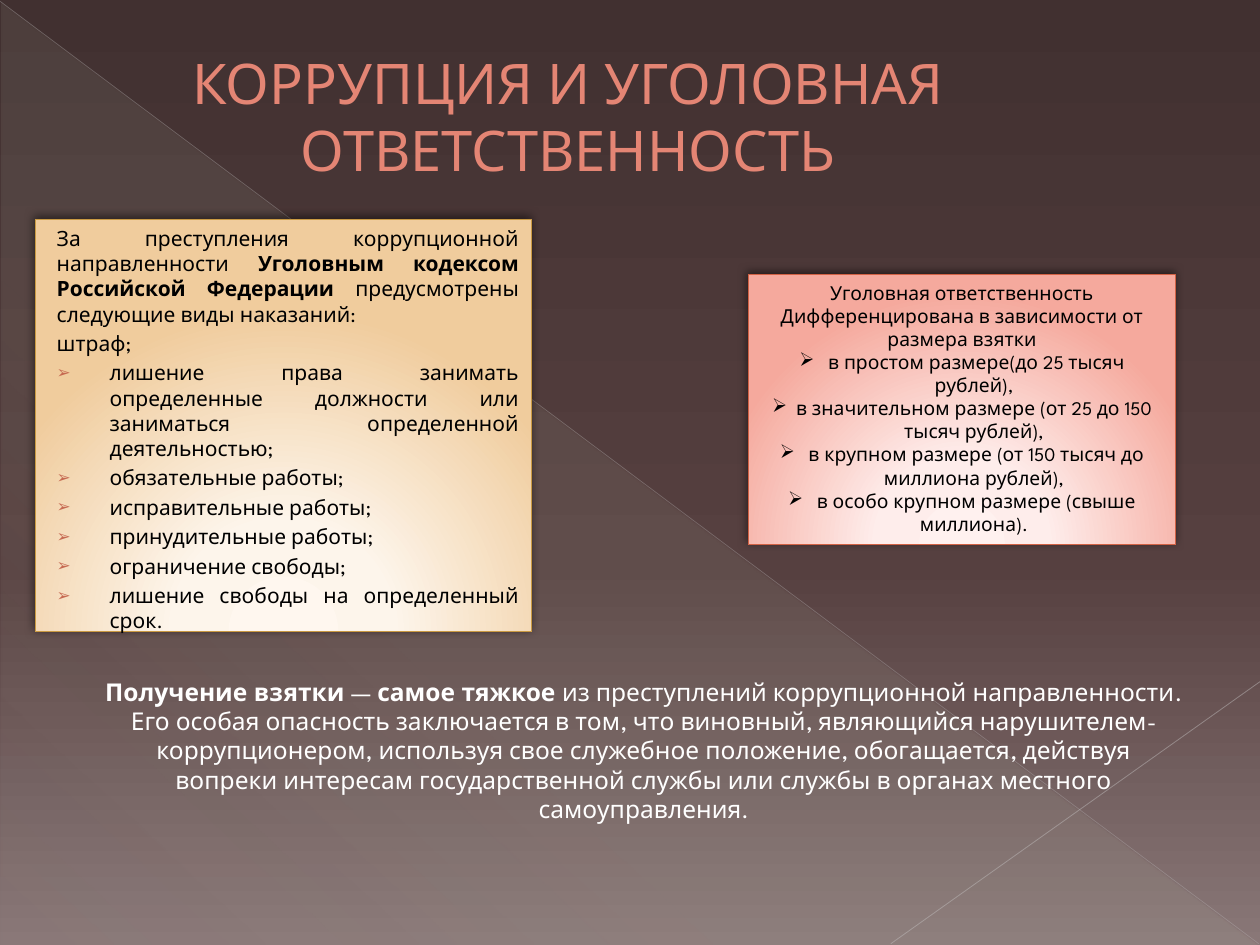
from lxml.etree import SubElement
from pptx import Presentation
from pptx.dml.color import RGBColor
from pptx.enum.shapes import MSO_CONNECTOR, MSO_SHAPE
from pptx.enum.text import MSO_ANCHOR, MSO_AUTO_SIZE, PP_ALIGN
from pptx.oxml.ns import qn
from pptx.util import Inches, Pt


def color(value):
    return RGBColor.from_string(value)


def add_node(parent, tag, **attributes):
    return SubElement(parent, qn(tag), {key: str(value) for key, value in attributes.items()})


def add_color(parent, value, alpha=100):
    node = add_node(parent, "a:srgbClr", val=value)
    if alpha < 100:
        add_node(node, "a:alpha", val=alpha * 1000)


def paint_gradient(fill, holder, stops, angle=None):
    fill.gradient()
    gradient = next(holder.iter(qn("a:gradFill")))
    for child in list(gradient):
        gradient.remove(child)
    stop_list = add_node(gradient, "a:gsLst")
    for position, *tint in stops:
        add_color(add_node(stop_list, "a:gs", pos=position * 1000), *tint)
    if angle is None:
        circle = add_node(gradient, "a:path", path="circle")
        add_node(circle, "a:fillToRect", l=50000, t=155000, r=50000, b=-55000)
    else:
        add_node(gradient, "a:lin", ang=angle * 60000, scaled=0)


class SlideBuilder:
    font = "League Spartan"
    bullet = "➢"

    def __init__(self, slide):
        self.slide = slide
        self.shapes = slide.shapes

    def place(self, shape, left, top, width, height):
        shape.left, shape.top = Inches(left), Inches(top)
        shape.width, shape.height = Inches(width), Inches(height)

    def take_placeholder(self, index, box):
        shape = self.slide.placeholders[index]
        parent = shape.element.getparent()
        parent.append(shape.element)
        self.place(shape, *box)
        return shape

    def background(self, stops):
        fill = self.slide.background.fill
        paint_gradient(fill, self.slide.element, stops, 90)

    def triangle(self, box, stops, angle):
        shape = self.shapes.add_shape(MSO_SHAPE.RIGHT_TRIANGLE, *map(Inches, box))
        shape.shadow.inherit = False
        shape.line.fill.background()
        paint_gradient(shape.fill, shape.element, stops, angle)

    def line(self, start, end, tint, width, alpha):
        connector = self.shapes.add_connector(MSO_CONNECTOR.STRAIGHT, *map(Inches, start + end))
        connector.line.color.rgb = color(tint)
        connector.line.width = Pt(width)
        solid = next(connector.element.iter(qn("a:srgbClr")))
        add_node(solid, "a:alpha", val=alpha * 1000)
        add_node(connector.element.spPr, "a:effectLst")

    def panel(self, shape, stops, border):
        paint_gradient(shape.fill, shape.element, stops)
        shape.line.color.rgb = color(border)
        shape.line.width = Pt(0.75)
        shape.shadow.inherit = False
        effects = shape.element.spPr.find(qn("a:effectLst"))
        shadow = add_node(effects, "a:outerShdw", blurRad=Pt(5), dist=Pt(2),
                          dir=245 * 60000, rotWithShape=0)
        add_color(shadow, "000000", 50)

    def set_text(self, shape, paragraphs, size, tint, align, auto_size=MSO_AUTO_SIZE.NONE):
        frame = shape.text_frame
        frame.word_wrap = True
        frame.auto_size = auto_size
        frame.vertical_anchor = MSO_ANCHOR.TOP
        frame.text = "\n".join("" for _ in paragraphs)
        for paragraph, runs in zip(frame.paragraphs, paragraphs):
            paragraph.alignment = align
            for text, bold in [(runs, False)] if isinstance(runs, str) else runs:
                run = paragraph.add_run()
                run.text = text
                run.font.name = self.font
                run.font.size = Pt(size)
                run.font.bold = bold
                run.font.color.rgb = color(tint)
        return frame.paragraphs

    def indent(self, paragraph, margin, hanging=0, bullet_tint=None):
        properties = paragraph._p.get_or_add_pPr()
        properties.set("marL", str(Inches(margin)))
        properties.set("indent", str(-Inches(hanging)))
        if bullet_tint:
            add_color(add_node(properties, "a:buClr"), bullet_tint)
            add_node(properties, "a:buSzPct", val=80000)
        if hanging:
            add_node(properties, "a:buChar", char=self.bullet)
        else:
            add_node(properties, "a:buNone")

    def title(self, box, text):
        shape = self.take_placeholder(0, box)
        frame = shape.text_frame
        frame.text = text
        frame.word_wrap = True
        frame.vertical_anchor = MSO_ANCHOR.MIDDLE
        paragraph = frame.paragraphs[0]
        paragraph.alignment = PP_ALIGN.CENTER
        self.indent(paragraph, 0.53)
        for run in paragraph.runs:
            run.font.name = self.font
            run.font.size = Pt(32)
            run.font.color.rgb = color("E48574")
            outline = add_node(run._r.get_or_add_rPr(), "a:ln", w=Pt(0.5))
            run._r.rPr.insert(0, outline)
            add_color(add_node(outline, "a:solidFill"), "894938")

    def punishments(self, box, intro, items):
        shape = self.take_placeholder(1, box)
        self.panel(shape, [(0, "FFF7EF"), (34, "FDF5EB"), (100, "F0CC9D")], "CA9A42")
        paragraphs = self.set_text(shape, intro + items, 12, "000000", PP_ALIGN.JUSTIFY)
        for paragraph in paragraphs[:len(intro)]:
            self.indent(paragraph, 0.07)
        for paragraph in paragraphs[len(intro):]:
            self.indent(paragraph, 0.49, 0.42, "C66951")

    def bribe_sizes(self, box, intro, items):
        shape = self.shapes.add_shape(MSO_SHAPE.RECTANGLE, *map(Inches, box))
        self.panel(shape, [(0, "FFF1EF"), (34, "FEEDEB"), (100, "F5A99D")], "D26245")
        paragraphs = self.set_text(shape, intro + items, 11, "000000", PP_ALIGN.CENTER,
                                   MSO_AUTO_SIZE.SHAPE_TO_FIT_TEXT)
        for paragraph in paragraphs[len(intro):]:
            self.indent(paragraph, 0.19, 0.19)

    def conclusion(self, box, paragraphs):
        shape = self.shapes.add_textbox(*map(Inches, box))
        self.set_text(shape, paragraphs, 14, "FFFFFF", PP_ALIGN.CENTER,
                      MSO_AUTO_SIZE.SHAPE_TO_FIT_TEXT)


def main():
    presentation = Presentation()
    presentation.slide_width, presentation.slide_height = Inches(10), Inches(7.5)
    builder = SlideBuilder(presentation.slides.add_slide(presentation.slide_layouts[1]))

    builder.background([(0, "413030"), (60, "564040"), (100, "897777")])
    builder.triangle((0.01, 0.02, 9.98, 7.48),
                     [(0, "CCD1B9", 10), (70, "CCD1B9", 8), (100, "CCD1B9", 1)], 133)
    builder.line((0, 0.01), (9.99, 7.49), "BCB9B9", 0.39, 35)
    builder.line((10, 5.41), (7.07, 7.49), "C3C0C0", 0.47, 45)

    builder.title((0.5, 0.29, 7.49, 1.25), "КОРРУПЦИЯ И УГОЛОВНАЯ\vОТВЕТСТВЕННОСТЬ")
    builder.punishments(
        (0.28, 1.74, 3.94, 3.27),
        [[("За преступления коррупционной направленности ", False),
          ("Уголовным кодексом Российской Федерации ", True),
          ("предусмотрены следующие виды наказаний:", False)],
         "штраф;"],
        ["лишение права занимать определенные должности или заниматься "
         "определенной деятельностью;",
         "обязательные работы;",
         "исправительные работы;",
         "принудительные работы;",
         "ограничение свободы;",
         "лишение свободы на определенный срок."])
    builder.bribe_sizes(
        (5.94, 2.18, 3.39, 2.14),
        ["Уголовная ответственность",
         "Дифференцирована в зависимости от",
         "размера взятки"],
        [" в простом размере(до 25 тысяч рублей),",
         "в значительном размере (от 25 до 150 тысяч рублей),",
         " в крупном размере (от 150 тысяч до миллиона рублей),",
         " в особо крупном размере (свыше миллиона)."])
    builder.conclusion(
        (0.58, 5.32, 9.06, 1.28),
        [[("Получение взятки ", True), ("— ", False), ("самое тяжкое ", True),
          ("из преступлений коррупционной направленности. Его особая опасность "
           "заключается в том, что виновный, являющийся нарушителем-коррупционером, "
           "используя свое служебное положение, обогащается, действуя", False)],
         "вопреки интересам государственной службы или службы в органах местного "
         "самоуправления."])

    presentation.save("out.pptx")


if __name__ == "__main__":
    main()
